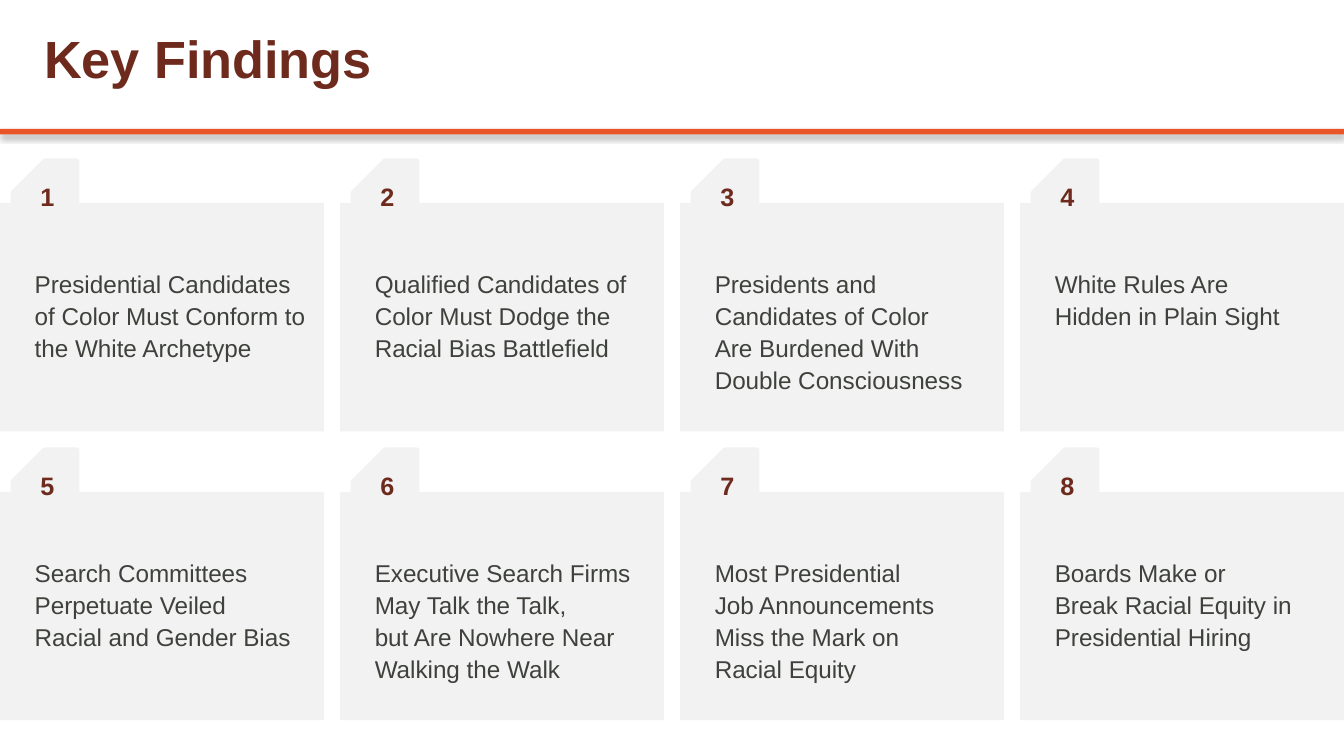
from copy import deepcopy

from lxml import etree
from pptx import Presentation
from pptx.dml.color import RGBColor
from pptx.enum.shapes import MSO_SHAPE
from pptx.enum.text import MSO_ANCHOR, PP_ALIGN
from pptx.oxml.ns import qn
from pptx.util import Inches, Pt

TITLE = "Key Findings"
FINDINGS = [
    "Presidential Candidates of Color Must Conform to the White Archetype",
    "Qualified Candidates of Color Must Dodge the Racial Bias Battlefield",
    "Presidents and Candidates of Color \nAre Burdened With Double Consciousness",
    "White Rules Are \nHidden in Plain Sight",
    "Search Committees Perpetuate Veiled \nRacial and Gender Bias",
    "Executive Search Firms May Talk the Talk, \nbut Are Nowhere Near Walking the Walk",
    "Most Presidential \nJob Announcements Miss the Mark on \nRacial Equity",
    "Boards Make or \nBreak Racial Equity in Presidential Hiring",
]

BROWN, ORANGE, GREY, INK = "6E2A1D", "E95429", "F2F2F2", "3E413C"
TITLE_FONT = {"name": "Arial", "size": Pt(28), "bold": True}
NUMBER_FONT = {"name": "Arial", "size": Pt(13.5), "bold": True}
BODY_FONT = {"name": "Arial", "size": Pt(13)}

PAGE_WIDTH = 10
PAGE_HEIGHT = PAGE_WIDTH * 9 / 16
COLUMNS = 4
CARD_WIDTH, CARD_HEIGHT = 2.41, 1.7
COLUMN_STEP = (PAGE_WIDTH - CARD_WIDTH) / (COLUMNS - 1)
FIRST_TOP, ROW_STEP = 1.51, 2.15


def color(value):
    return RGBColor.from_string(value)


def add_block(shapes, kind, left, top, width, height, fill, line_width=0):
    block = shapes.add_shape(kind, Inches(left), Inches(top), Inches(width), Inches(height))
    block.shadow.inherit = False
    block.fill.solid()
    block.fill.fore_color.rgb = color(fill)
    if line_width:
        block.line.color.rgb = color(fill)
        block.line.width = Pt(line_width)
    else:
        block.line.fill.background()
    return block


def write(box, text, font, ink, anchor=MSO_ANCHOR.TOP, spacing=None):
    frame = box.text_frame
    frame.word_wrap = True
    frame.vertical_anchor = anchor
    para = frame.paragraphs[0]
    para.text = text
    para.alignment = PP_ALIGN.LEFT
    para.line_spacing = spacing
    for span in para.runs:
        for name, value in font.items():
            setattr(span.font, name, value)
        span.font.color.rgb = color(ink)
    # Line breaks take the text's format, so they do not raise the line height.
    for line_break in para._p.findall(qn("a:br")):
        line_break.append(deepcopy(para.runs[0]._r.rPr))


def add_text(page, left, top, width, height, *text_format, **options):
    box = page.shapes.add_textbox(Inches(left), Inches(top), Inches(width), Inches(height))
    write(box, *text_format, **options)


def add_shadow(shape):
    effects = shape._element.spPr.find(qn("a:effectLst"))
    shadow = etree.SubElement(effects, qn("a:outerShdw"), blurRad=str(Pt(3.1)),
                              dist=str(Pt(1.8)), dir="5400000", rotWithShape="0")
    black = etree.SubElement(shadow, qn("a:srgbClr"), val="000000")
    etree.SubElement(black, qn("a:alpha"), val="35000")


def add_number_tab(group, left, top, number):
    tab = add_block(group.shapes, MSO_SHAPE.SNIP_1_RECTANGLE,
                    left + 0.1, top - 0.31, 0.47, 0.47, GREY, 3)
    tab.adjustments[0] = 0.5
    tab.rotation = 270
    label = add_block(group.shapes, MSO_SHAPE.RECTANGLE,
                      left + 0.3, top - 0.16, 0.19, 0.35, GREY, 0.75)
    for side in ("left", "top", "right", "bottom"):
        setattr(label.text_frame, f"margin_{side}", 0)
    write(label, str(number), NUMBER_FONT, BROWN)


def main():
    deck = Presentation()
    deck.slide_width, deck.slide_height = Inches(PAGE_WIDTH), Inches(PAGE_HEIGHT)
    page = deck.slides.add_slide(deck.slide_layouts[6])

    add_shadow(add_block(page.shapes, MSO_SHAPE.RECTANGLE, 0, 0.96, PAGE_WIDTH, 0.04, ORANGE))
    add_text(page, 0.23, 0.07, 6.49, 0.71, TITLE, TITLE_FONT, BROWN, anchor=MSO_ANCHOR.MIDDLE)

    places = []
    for index in range(len(FINDINGS)):
        row, column = divmod(index, COLUMNS)
        places.append((column * COLUMN_STEP, FIRST_TOP + row * ROW_STEP))

    for (left, top), finding in zip(places, FINDINGS):
        add_block(page.shapes, MSO_SHAPE.RECTANGLE, left, top, CARD_WIDTH, CARD_HEIGHT, GREY)
        add_text(page, left + 0.16, top + 0.42, 2.22, 0.86, finding, BODY_FONT, INK, spacing=1.1)

    for start in range(0, len(FINDINGS), COLUMNS):
        group = page.shapes.add_group_shape()
        for index in range(start, start + COLUMNS):
            add_number_tab(group, *places[index], index + 1)

    deck.save("out.pptx")


if __name__ == "__main__":
    main()
